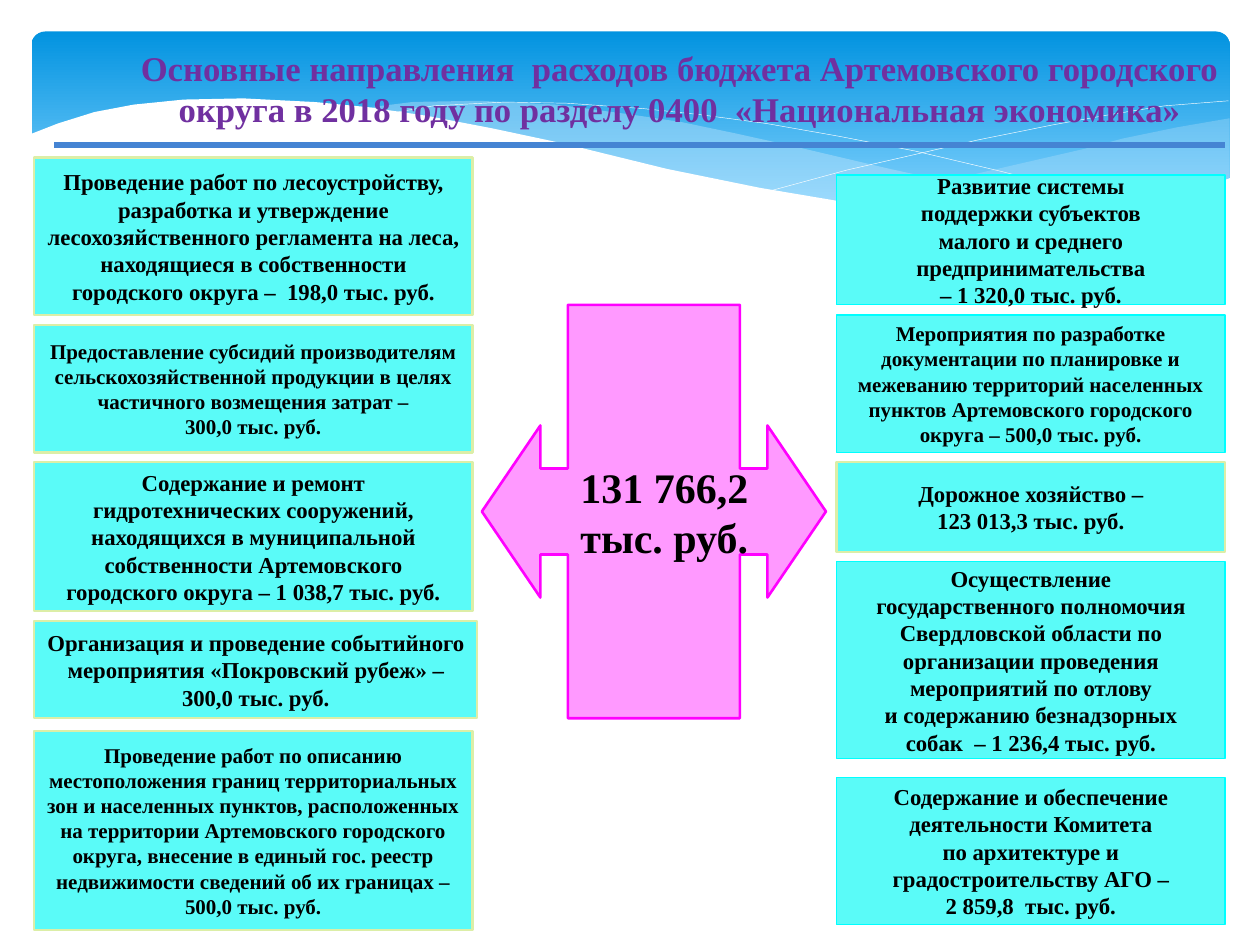
"""Build a slide on the 2018 national economy spending of a city district."""
from lxml import etree
from pptx import Presentation
from pptx.dml.color import RGBColor
from pptx.enum.shapes import MSO_CONNECTOR, MSO_SHAPE
from pptx.enum.text import MSO_ANCHOR, PP_ALIGN
from pptx.oxml.ns import qn
from pptx.util import Pt

ROUND = MSO_SHAPE.ROUNDED_RECTANGLE
PLATE = MSO_SHAPE.PENTAGON
CALLOUT = MSO_SHAPE.LEFT_RIGHT_ARROW_CALLOUT
STRAIGHT = MSO_CONNECTOR.STRAIGHT
CENTER = PP_ALIGN.CENTER
MIDDLE = MSO_ANCHOR.MIDDLE
FONT = "Times New Roman"

COLORS = {
    "sky_top": "0293E0", "sky_bottom": "83D3FE", "wave": "C6E7FC", "white": "FFFFFF",
    "title": "7030A0", "rule": "4584D3", "text": "000000", "box": "5AFBF8",
    "lime": "DCEEA7", "cyan": "00FFFF", "pink": "FF99FF", "magenta": "FF00FF",
}

TITLE = ("Основные направления  расходов бюджета Артемовского городского "
         "округа в 2018 году по разделу 0400  «Национальная экономика»")
TOTAL = ["131 766,2", "тыс. руб."]

COLUMNS = [
    (19.4, [
        (90, 250.6, 90, 13, "lime", [
            "Проведение работ по лесоустройству, разработка и утверждение лесохозяйственного "
            "регламента на леса, находящиеся в собственности городского округа –  198,0 тыс. руб."]),
        (185.8, 250.6, 72.7, 12, "lime", [
            "Предоставление субсидий производителям сельскохозяйственной продукции в целях "
            "частичного возмещения затрат –", "300,0 тыс. руб."]),
        (264.2, 250.6, 85, 13, "lime", [
            "Содержание и ремонт гидротехнических сооружений, находящихся в муниципальной "
            "собственности Артемовского городского округа – 1 038,7 тыс. руб."]),
        (355, 253.4, 55.4, 13, "lime", [
            "Организация и проведение событийного мероприятия «Покровский рубеж» –",
            "300,0 тыс. руб."]),
        (417.6, 250.6, 113.8, 12, "lime", [
            "Проведение работ по описанию местоположения границ территориальных зон и населенных "
            "пунктов, расположенных на территории Артемовского городского округа, внесение в "
            "единый гос. реестр недвижимости сведений об их границах –", "500,0 тыс. руб."]),
    ]),
    (478, [
        (100, 222, 74.2, 13, "cyan", [
            "Развитие системы", "поддержки субъектов", "малого и среднего",
            "предпринимательства", "– 1 320,0 тыс. руб."]),
        (180, 222, 78.5, 12, "cyan", [
            "Мероприятия по разработке документации по планировке и межеванию территорий "
            "населенных пунктов Артемовского городского округа – 500,0 тыс. руб."]),
        (264.2, 222, 51.1, 13, "lime", ["Дорожное хозяйство –", "123 013,3 тыс. руб."]),
        (321, 222, 112.3, 13, "cyan", [
            "Осуществление", "государственного полномочия", "Свердловской области по",
            "организации проведения", "мероприятий по отлову",
            "и содержанию безнадзорных", "собак  – 1 236,4 тыс. руб."]),
        (444.2, 222, 84.2, 13, "cyan", [
            "Содержание и обеспечение", "деятельности Комитета", "по архитектуре и",
            "градостроительству АГО –", "2 859,8  тыс. руб."]),
    ]),
]

RIGHT_WAVE = [
    (702, 67.7), (673, 72.7), (641.5, 79.2), (620, 85), (579.6, 94.3), (542, 103),
    (508, 109.4), (476, 115.2), (507.6, 118.8), (536.4, 121.7), (570, 123.8), (601, 123.8),
    (634, 120.2), (663, 115.2), (683, 109.4), (702.7, 101.5), (702.7, 67.7)]
MIDDLE_WAVE = [
    (643, 120.2), (602.6, 115.2), (558, 107.3), (508.3, 96.5), (453, 83.5), (420.5, 76.3),
    (389.5, 69.8), (360.7, 65.5), (318, 59.8), (273.6, 57.6), (236, 58.3), (206, 62),
    (246, 67.7), (291, 76.3), (323, 83.5), (381.6, 97.2), (432.7, 108), (479, 116),
    (520, 121), (556.6, 123.8), (589, 124.6), (617, 123.1)]
FALLING_LINE = [
    (222.5, 64.8), (247.7, 60.5), (288.7, 58.3), (324, 59), (367, 62), (400, 65.5),
    (438, 70.6), (479, 77.8), (523.4, 86.4), (572.4, 98), (625, 111.6), (653, 119.5)]
RISING_LINE = [
    (441.4, 108.7), (483.8, 97.2), (518.4, 89.3), (558.7, 80), (602, 71.3),
    (634.3, 65.5), (665.3, 60.5), (702, 57.6)]
WHITE_WAVE = [
    (703.4, 101.5), (684, 108.7), (662.4, 114.5), (630, 120.2), (592.6, 123.1), (560, 122.4),
    (522.7, 120.2), (481, 115.2), (434, 107.3), (381, 96.5), (322, 82), (281.5, 73.4),
    (244, 66.2), (210, 61.2), (180, 58.3), (139, 56.2), (105, 56.9), (76.3, 59.8),
    (54, 64), (33, 70.6), (16.6, 77), (16.6, 161), (703.4, 161)]

CURVES = [
    (RIGHT_WAVE, "wave", 29, None), (MIDDLE_WAVE, "wave", 40, None),
    (FALLING_LINE, None, 100, "white"), (RISING_LINE, None, 100, "white"),
    (WHITE_WAVE, "white", 100, None),
]


def rgb(name):
    return RGBColor.from_string(COLORS[name])


def paint(sp, fill, line, width=0, alpha=100):
    sp.shadow.inherit = False
    if fill:
        sp.fill.solid()
        sp.fill.fore_color.rgb = rgb(fill)
        if alpha < 100:
            clr = sp.fill._xPr.find(qn("a:solidFill"))[0]
            etree.SubElement(clr, qn("a:alpha")).set("val", str(alpha * 1000))
    else:
        sp.fill.background()
    if line:
        sp.line.color.rgb = rgb(line)
        sp.line.width = Pt(width)
    else:
        sp.line.fill.background()


def write(sp, lines, size, color="text"):
    tf = sp.text_frame
    tf.word_wrap = True
    tf.vertical_anchor = MIDDLE
    tf.text = "\n".join(lines)
    for p in tf.paragraphs:
        p.alignment = CENTER
        for r in p.runs:
            r.font.name = FONT
            r.font.size = Pt(size)
            r.font.bold = True
            r.font.color.rgb = rgb(color)


def add_curve(s, points, fill, alpha, line):
    pts = [(Pt(x), Pt(y)) for x, y in points]
    builder = s.shapes.build_freeform(*pts[0])
    builder.add_line_segments(pts[1:], close=bool(fill))
    paint(builder.convert_to_shape(), fill, line, 0.25, alpha)


def add_sky(s):
    sp = s.shapes.add_shape(ROUND, Pt(18), Pt(18), Pt(684.7), Pt(112.3))
    paint(sp, None, None)
    sp.adjustments[0] = 0.07
    sp.fill.gradient()
    sp.fill.gradient_angle = 270
    stops = zip(sp.fill.gradient_stops, (0, 0.9), ("sky_top", "sky_bottom"))
    for stop, position, color in stops:
        stop.position = position
        stop.color.rgb = rgb(color)


def add_total(s):
    sp = s.shapes.add_shape(CALLOUT, Pt(275.4), Pt(174.2), Pt(196.6), Pt(236.2))
    for i, value in enumerate((0.25, 0.25, 0.17, 0.5)):
        sp.adjustments[i] = value
    paint(sp, "pink", "magenta", 1.5)
    write(sp, TOTAL, 24)
    tf = sp.text_frame
    tf.word_wrap = False
    tf.margin_left, tf.margin_right = Pt(12), Pt(0)


def main():
    prs = Presentation()
    prs.slide_width, prs.slide_height = Pt(720), Pt(540)
    s = prs.slides.add_slide(prs.slide_layouts[6])
    add_sky(s)
    for curve in CURVES:
        add_curve(s, *curve)
    title = s.shapes.add_textbox(Pt(56.2), Pt(16.6), Pt(663.8), Pt(67.7))
    write(title, [TITLE], 19.8, "title")
    add_total(s)
    rule = s.shapes.add_connector(STRAIGHT, Pt(31), Pt(82.8), Pt(700), Pt(82.8))
    rule.line.color.rgb = rgb("rule")
    rule.line.width = Pt(3.75)
    etree.SubElement(rule._element.spPr, qn("a:effectLst"))
    for left, boxes in COLUMNS:
        for top, width, height, size, edge, lines in boxes:
            sp = s.shapes.add_shape(PLATE, Pt(left), Pt(top), Pt(width), Pt(height))
            sp.adjustments[0] = 0
            paint(sp, "box", edge, 1.25 if edge == "lime" else 0.75)
            write(sp, lines, size)
    prs.save("out.pptx")


if __name__ == "__main__":
    main()
